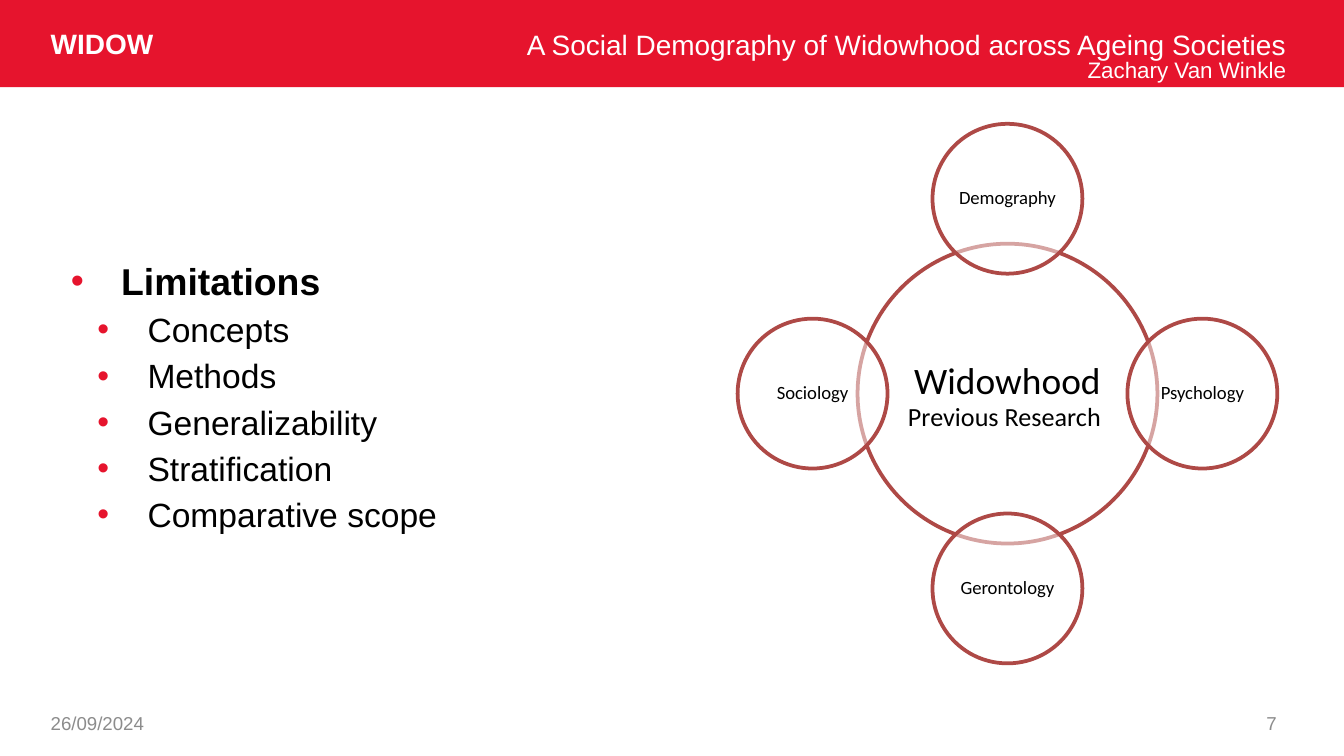
from lxml import etree
from pptx import Presentation
from pptx.dml.color import RGBColor
from pptx.enum.shapes import MSO_SHAPE
from pptx.enum.text import MSO_ANCHOR, PP_ALIGN
from pptx.oxml.ns import qn
from pptx.util import Cm, Pt

RECTANGLE, OVAL = MSO_SHAPE.RECTANGLE, MSO_SHAPE.OVAL
TOP, MIDDLE = MSO_ANCHOR.TOP, MSO_ANCHOR.MIDDLE
LEFT, CENTER, RIGHT = PP_ALIGN.LEFT, PP_ALIGN.CENTER, PP_ALIGN.RIGHT

RED = RGBColor(0xE6, 0x14, 0x2D)
RING = RGBColor(0xAE, 0x49, 0x46)
WHITE = RGBColor(0xFF, 0xFF, 0xFF)
BLACK = RGBColor(0x00, 0x00, 0x00)
GREY = RGBColor(0x8C, 0x8C, 0x8C)

SLIDE_WIDTH, SLIDE_HEIGHT = 25.4, 14.29
LIMITATIONS = ["Concepts", "Methods", "Generalizability", "Stratification",
               "Comparative scope"]
DISCIPLINES = [("Demography", 0, -1), ("Psychology", 1, 0),
               ("Gerontology", 0, 1), ("Sociology", -1, 0)]


def style_run(run, size, color, font="Arial", bold=False):
    """Set the typeface, size, colour and weight of a run."""
    run.font.name = font
    run.font.size = Pt(size)
    run.font.color.rgb = color
    run.font.bold = bold


def add_line(slide, box, text, size, color, align=LEFT, anchor=MIDDLE,
             bold=False, spacing=1.0):
    """Place one line of text in a box."""
    line = slide.shapes.add_textbox(*map(Cm, box))
    frame = line.text_frame
    frame.word_wrap = True
    frame.vertical_anchor = anchor
    frame.text = text
    paragraph = frame.paragraphs[0]
    paragraph.alignment = align
    paragraph.line_spacing = spacing
    style_run(paragraph.runs[0], size, color, bold=bold)


def add_header(slide, left, top, width, height):
    """Draw the red band with the project name, talk title and speaker."""
    band = slide.shapes.add_shape(RECTANGLE, Cm(left), Cm(top), Cm(width), Cm(height))
    band.shadow.inherit = False
    band.fill.solid()
    band.fill.fore_color.rgb = RED
    band.line.fill.background()
    title_width = 18.69
    title_left = left + width - title_width - 0.84
    add_line(slide, (title_left, top + 0.33, title_width, 0.66),
             "A Social Demography of Widowhood across Ageing Societies",
             15, WHITE, RIGHT, TOP, spacing=1.1)
    add_line(slide, (title_left, top + 0.89, title_width, 0.51),
             "Zachary Van Winkle", 12, WHITE, RIGHT, TOP, spacing=1.1)
    add_line(slide, (left + 0.71, top + 0.46, 2.79, 0.66), "WIDOW", 15, WHITE,
             bold=True, spacing=1.1)


def add_bullet(paragraph, margin, hanging):
    """Give a paragraph a red bullet with a hanging indent."""
    properties = paragraph._p.get_or_add_pPr()
    properties.set("marL", str(Cm(margin)))
    properties.set("indent", str(-Cm(hanging)))
    bullet_color = etree.SubElement(properties, qn("a:buClr"))
    etree.SubElement(bullet_color, qn("a:srgbClr"), val=str(RED))
    etree.SubElement(properties, qn("a:buFont"), typeface="Arial")
    etree.SubElement(properties, qn("a:buChar"), char="•")


def add_limitations(slide, left, top, width, height):
    """Write the bulleted list of limitations."""
    limitations = slide.shapes.add_textbox(Cm(left), Cm(top), Cm(width), Cm(height))
    frame = limitations.text_frame
    frame.word_wrap = True
    frame.vertical_anchor = MIDDLE
    frame.text = "\n".join(["Limitations"] + LIMITATIONS)
    for index, paragraph in enumerate(frame.paragraphs):
        is_heading = index == 0
        paragraph.level = 0 if is_heading else 1
        paragraph.line_spacing = 1.1
        paragraph.space_before = Pt(1)
        add_bullet(paragraph, 0.95 if is_heading else 1.45, 0.95)
        style_run(paragraph.runs[0], 20 if is_heading else 18, BLACK, bold=is_heading)


def add_circle(slide, center_x, center_y, diameter, inset, pieces):
    """Draw a half-transparent ring holding pieces of text with their sizes."""
    circle = slide.shapes.add_shape(
        OVAL, Cm(center_x - diameter / 2), Cm(center_y - diameter / 2),
        Cm(diameter), Cm(diameter))
    circle.shadow.inherit = False
    circle.fill.solid()
    circle.fill.fore_color.rgb = WHITE
    fill_color = circle._element.spPr.find(qn("a:solidFill")).find(qn("a:srgbClr"))
    etree.SubElement(fill_color, qn("a:alpha"), val="50000")
    circle.line.color.rgb = RING
    circle.line.width = Pt(2)
    frame = circle.text_frame
    frame.word_wrap = True
    frame.vertical_anchor = MIDDLE
    frame.margin_left = frame.margin_right = Cm(inset)
    frame.margin_top = frame.margin_bottom = Cm(inset)
    paragraph = frame.paragraphs[0]
    paragraph.alignment = CENTER
    paragraph.line_spacing = 0.9
    for text, size in pieces:
        run = paragraph.add_run()
        run.text = text
        style_run(run, size, BLACK, "Calibri")


def add_research_circles(slide, left, top, side):
    """Draw the widowhood hub with one discipline on each side of it."""
    center_x, center_y = left + side / 2, top + side / 2
    hub = side / 1.8
    satellite = hub / 2
    reach = (side - satellite) / 2
    add_circle(slide, center_x, center_y, hub, 0.08,
               [("Widowhood", 20), (" ", 24), ("Previous Research ", 14)])
    for discipline, across, down in DISCIPLINES:
        add_circle(slide, center_x + across * reach, center_y + down * reach,
                   satellite, 0.03, [(discipline, 10)])


def add_footer(slide, left, top, width, height):
    """Write the date on the left and the page number on the right."""
    part_width = 5.92
    add_line(slide, (left, top, part_width, height), "26/09/2024", 10, GREY)
    add_line(slide, (left + width - part_width, top, part_width, height), "7", 10,
             GREY, RIGHT)


def main():
    """Build and save the slide."""
    presentation = Presentation()
    presentation.slide_width = Cm(SLIDE_WIDTH)
    presentation.slide_height = Cm(SLIDE_HEIGHT)
    slide = presentation.slides.add_slide(presentation.slide_layouts[6])
    add_header(slide, 0, 0, SLIDE_WIDTH, 1.65)
    add_limitations(slide, 1.09, 3.35, 11.81, 8.2)
    add_research_circles(slide, 13.94, 2.34, 10.2)
    add_footer(slide, 0.71, 13.28, 23.67, 0.76)
    presentation.save("out.pptx")


if __name__ == "__main__":
    main()
